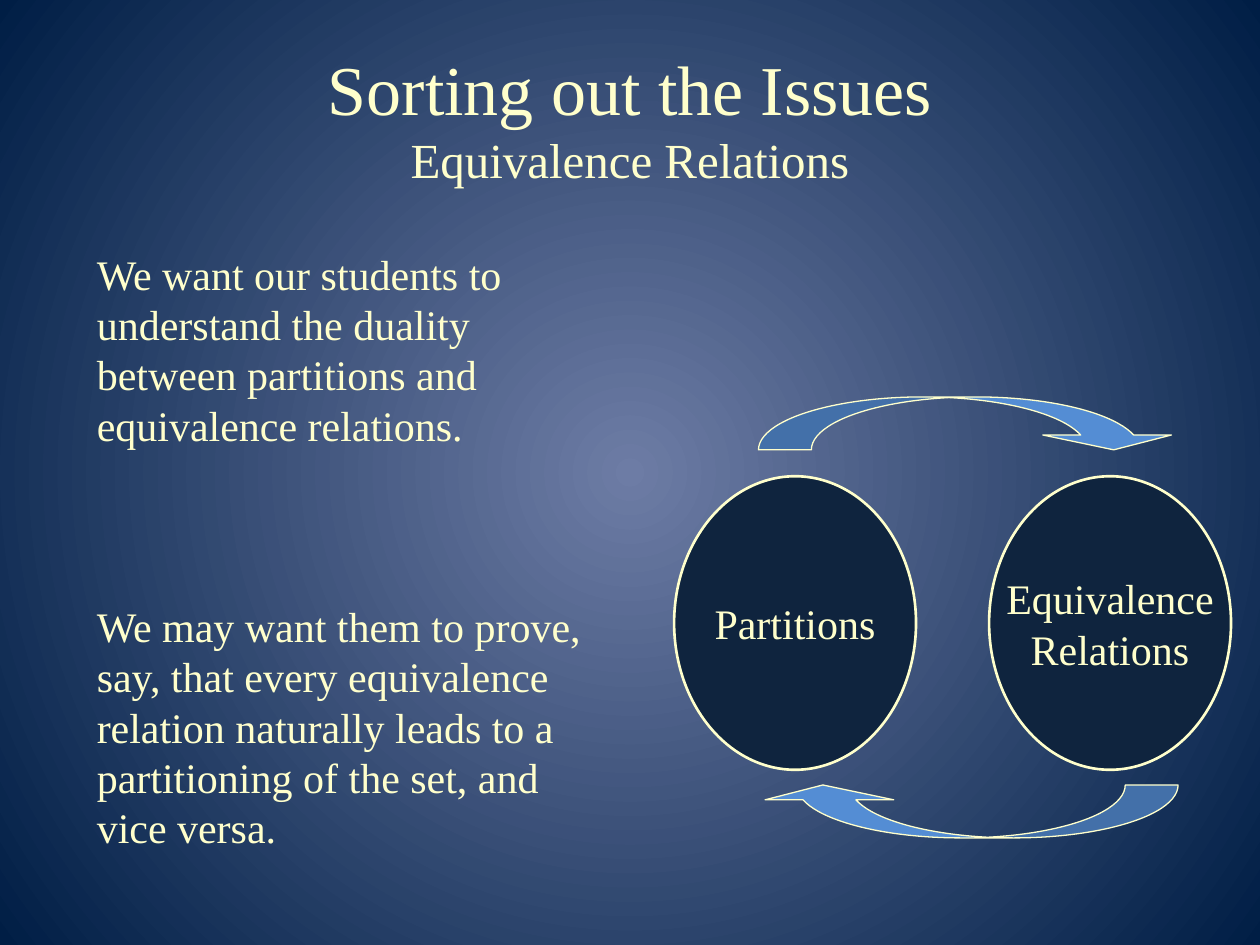
"""Build the slide on partitions and equivalence relations."""
import dataclasses

import lxml.etree
import pptx
import pptx.dml.color
import pptx.enum.shapes
import pptx.enum.text
import pptx.oxml.ns
import pptx.util

CELL = pptx.util.Inches(1)
COLS, ROWS = 10, 7.5
FONT = "Times New Roman"
CREAM, NAVY, BLUE = "FFFFCC", "0F243E", "548DD4"
GLOW, EDGE = "6D7CA5", "001E45"
KIND = pptx.enum.shapes.MSO_SHAPE
ALIGN = pptx.enum.text.PP_ALIGN
MIDDLE = pptx.enum.text.MSO_ANCHOR.MIDDLE


@dataclasses.dataclass
class Box:
    """A place on the grid, in columns and rows."""
    col: float
    row: float
    wide: float
    high: float

    def place(self) -> list:
        """Return left, top, width and height as lengths."""
        return [int(n * CELL) for n in (self.col, self.row, self.wide, self.high)]


@dataclasses.dataclass
class Oval:
    """A named set at a column."""
    col: float
    lines: list


@dataclasses.dataclass
class Arrow:
    """A curved arrow at a row, turned by degrees."""
    row: float
    turn: float


OVALS = [Oval(7.85, ["Equivalence", "Relations"]), Oval(5.35, ["Partitions"])]
ARROWS = [Arrow(3.15, 0), Arrow(6.23, 180)]
BODY = [
    "We want our students to understand the duality between partitions "
    "and equivalence relations.",
    "We may want them to prove, say, that every equivalence relation "
    "naturally leads to a partitioning of the set, and vice versa.",
]


def tint(code: str) -> pptx.dml.color.RGBColor:
    """Turn a hex string into a colour."""
    return pptx.dml.color.RGBColor.from_string(code)


def style(font, size: float) -> None:
    """Give a font the face and colour of the slide."""
    font.name, font.size = FONT, pptx.util.Pt(size)
    font.color.rgb = tint(CREAM)


def write(frame, lines: list, align, gap: float = 0) -> None:
    """Write one paragraph for each line, with a gap between them."""
    for num, line in enumerate(lines):
        para = frame.add_paragraph() if num else frame.paragraphs[0]
        para.text, para.alignment = line, align
        para.space_before = pptx.util.Pt(gap if num else 0)
        style(para.font, 24)


def draw(slide, kind, box: Box, fill: str, width: float):
    """Draw a filled shape with a cream outline."""
    shape = slide.shapes.add_shape(kind, *box.place())
    shape.shadow.inherit = False
    shape.fill.solid()
    shape.fill.fore_color.rgb = tint(fill)
    shape.line.color.rgb = tint(CREAM)
    shape.line.width = pptx.util.Pt(width)
    return shape


def paint(slide) -> None:
    """Fill the background with a glow from the centre."""
    fill = slide.background.fill
    fill.gradient()
    for stop, code in zip(fill.gradient_stops, (GLOW, EDGE)):
        stop.color.rgb = tint(code)
    qn = pptx.oxml.ns.qn
    line = next(slide.element.iter(qn("a:lin")))
    grad = line.getparent()
    grad.remove(line)
    glow = lxml.etree.Element(qn("a:path"), {"path": "circle"})
    sides = {side: "50000" for side in "ltrb"}
    lxml.etree.SubElement(glow, qn("a:fillToRect"), sides)
    grad.append(glow)


def head(slide) -> None:
    """Write the title and its smaller second line."""
    frame = slide.shapes.add_textbox(*Box(0.5, 0.3, 9, 1.25).place()).text_frame
    frame.word_wrap, frame.vertical_anchor = True, MIDDLE
    para = frame.paragraphs[0]
    para.alignment = ALIGN.CENTER
    run = para.add_run()
    run.text = "Sorting out the Issues"
    style(run.font, 40)
    para.add_line_break()
    run = para.add_run()
    run.text = "Equivalence Relations"
    style(run.font, 28)


def main() -> None:
    """Build and save the slide."""
    deck = pptx.Presentation()
    deck.slide_width, deck.slide_height = int(COLS * CELL), int(ROWS * CELL)
    slide = deck.slides.add_slide(deck.slide_layouts[6])
    paint(slide)
    head(slide)
    for oval in OVALS:
        shape = draw(slide, KIND.OVAL, Box(oval.col, 3.78, 1.92, 2.33), NAVY, 1.5)
        shape.text_frame.word_wrap = False
        shape.text_frame.vertical_anchor = MIDDLE
        write(shape.text_frame, oval.lines, ALIGN.CENTER)
    for arrow in ARROWS:
        box = Box(6.02, arrow.row, 3.33, 0.42)
        shape = draw(slide, KIND.CURVED_DOWN_ARROW, box, BLUE, 0.75)
        shape.rotation = arrow.turn
        for num, share in enumerate((1.05, 2.43, 0.28)):
            shape.adjustments[num] = share
    frame = slide.shapes.add_textbox(*Box(0.67, 1.92, 4.33, 4.89).place()).text_frame
    frame.word_wrap = True
    write(frame, BODY, ALIGN.LEFT, 86)
    deck.save("out.pptx")


if __name__ == "__main__":
    main()
